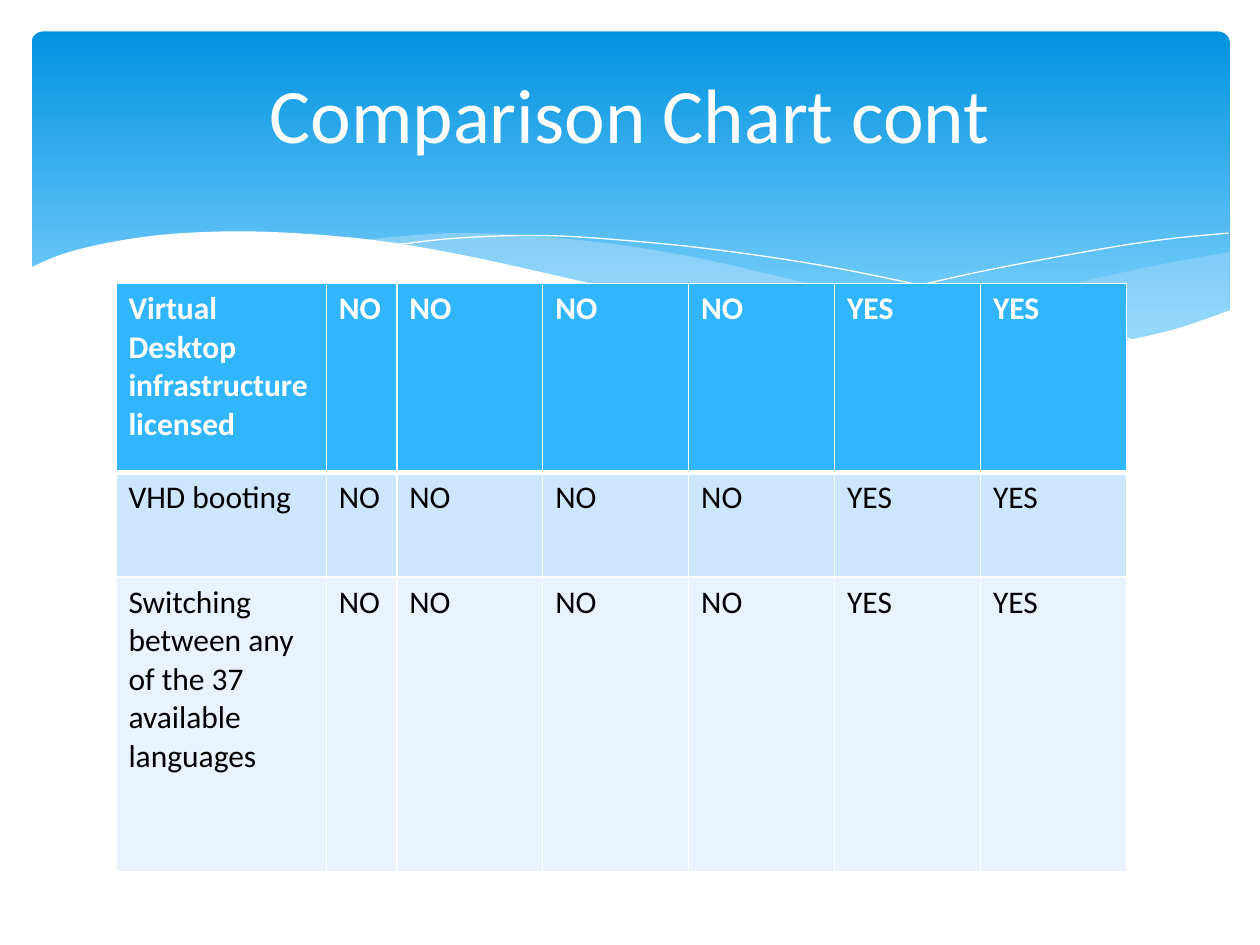
import lxml.etree
import pptx
import pptx.dml.color
import pptx.enum.shapes
import pptx.enum.text
import pptx.oxml.ns
import pptx.util

COLORS = {
    "white": "FFFFFF", "black": "000000", "sky_top": "0293E0", "sky_bottom": "83D3FE",
    "mist": "C6E7FC", "header": "31B6FD", "band_dark": "CEE5FE", "band_light": "E8F3FF",
}
GRID_COLUMNS, GRID_ROWS = 100, 75
CURVE_STEPS = 6


def color(name):
    return pptx.dml.color.RGBColor.from_string(COLORS[name])


def apply_format(target, values):
    for name, value in values.items():
        setattr(target, name, value)


def add_element(parent, tag, **attributes):
    return lxml.etree.SubElement(parent, pptx.oxml.ns.qn(tag), attributes)


def smooth(knots):
    """Return points on a Catmull-Rom curve through the knots."""
    padded = [knots[0], *knots, knots[-1]]
    points = [knots[0]]
    for a, b, c, d in zip(padded, padded[1:], padded[2:], padded[3:]):
        for step in range(1, CURVE_STEPS + 1):
            t = step / CURVE_STEPS
            points.append(tuple(
                (2 * q + (r - p) * t + (2 * p - 5 * q + 4 * r - s) * t ** 2
                 + (3 * q - p - 3 * r + s) * t ** 3) / 2
                for p, q, r, s in zip(a, b, c, d)))
    return points


class SlideBuilder:
    """Draws on one slide; lengths are grid columns and rows."""

    font = "Calibri"

    def __init__(self, presentation):
        self.column = presentation.slide_width / GRID_COLUMNS
        self.row = presentation.slide_height / GRID_ROWS
        self.slide = presentation.slides.add_slide(presentation.slide_layouts[5])
        self.shapes = self.slide.shapes

    def x(self, columns):
        return round(columns * self.column)

    def y(self, rows):
        return round(rows * self.row)

    def box(self, left, top, width, height):
        return self.x(left), self.y(top), self.x(width), self.y(height)

    def style_text(self, paragraph, size, color_name, bold=False):
        apply_format(paragraph.font, {"name": self.font, "size": pptx.util.Pt(size), "bold": bold})
        paragraph.font.color.rgb = color(color_name)

    def title(self, text, area, size):
        shape = self.shapes.title
        apply_format(shape, dict(zip(("left", "top", "width", "height"), self.box(*area))))
        frame = shape.text_frame
        apply_format(frame, {"text": text, "word_wrap": True,
                             "vertical_anchor": pptx.enum.text.MSO_ANCHOR.MIDDLE})
        paragraph = frame.paragraphs[0]
        paragraph.alignment = pptx.enum.text.PP_ALIGN.CENTER
        self.style_text(paragraph, size, "white")
        self.shapes._spTree.append(shape._element)  # bring to front

    def gradient_panel(self, area, corner, stops):
        shape = self.shapes.add_shape(
            pptx.enum.shapes.MSO_SHAPE.ROUNDED_RECTANGLE, *self.box(*area))
        shape.adjustments[0] = corner
        shape.shadow.inherit = False
        shape.line.fill.background()
        shape.fill.gradient()
        shape.fill.gradient_angle = 270
        for stop, (position, name) in zip(shape.fill.gradient_stops, stops):
            stop.position = position
            stop.color.rgb = color(name)

    def outline(self, points, closed):
        start, *rest = [(self.x(column), self.y(row)) for column, row in points]
        builder = self.shapes.build_freeform(*start)
        builder.add_line_segments(rest, close=closed)
        shape = builder.convert_to_shape()
        shape.shadow.inherit = False
        return shape

    def wave(self, *edges, fill, opacity=100):
        shape = self.outline([point for edge in edges for point in smooth(edge)], True)
        shape.line.fill.background()
        shape.fill.solid()
        shape.fill.fore_color.rgb = color(fill)
        if opacity < 100:
            node = shape._element.spPr.find(".//" + pptx.oxml.ns.qn("a:srgbClr"))
            add_element(node, "a:alpha", val=str(opacity * 1000))

    def hairline(self, knots):
        shape = self.outline(smooth(knots), False)
        shape.fill.background()
        shape.line.color.rgb = color("white")
        shape.line.width = 0

    def borders(self, cell, widths):
        properties = cell._tc.get_or_add_tcPr()
        for side, width in zip("LRTB", widths):
            line = add_element(properties, "a:ln" + side, w=str(pptx.util.Pt(width)))
            add_element(add_element(line, "a:solidFill"), "a:srgbClr", val=COLORS["white"])

    def table(self, area, widths, heights, rows, fills, size):
        table = self.shapes.add_table(len(rows), len(widths), *self.box(*area)).table
        for column, width in zip(table.columns, widths):
            column.width = self.x(width)
        for row, height in zip(table.rows, heights):
            row.height = self.y(height)
        for i, (texts, fill) in enumerate(zip(rows, fills)):
            header = i == 0
            for j, text in enumerate(texts):
                cell = table.cell(i, j)
                cell.text = text
                self.borders(cell, (1, 1, 3 if i == 1 else 1, 3 if header else 1))
                cell.fill.solid()
                cell.fill.fore_color.rgb = color(fill)
                self.style_text(cell.text_frame.paragraphs[0], size,
                                "white" if header else "black", header)


def main():
    presentation = pptx.Presentation()
    apply_format(presentation, {"slide_width": pptx.util.Inches(10),
                                "slide_height": pptx.util.Inches(7.5)})
    page = SlideBuilder(presentation)

    # Blue panel
    page.gradient_panel((2.5, 2.5, 95.1, 27), 0.034, [(0, "sky_top"), (0.9, "sky_bottom")])

    # Translucent waves, each an upper and a lower edge
    page.wave([(97.6, 20), (92.1, 21), (86.1, 22.3), (77.9, 24.2), (66.1, 26.5)],
              [(66.1, 26.5), (71.9, 27.2), (76.9, 27.7), (81.4, 27.8), (86.3, 27.5),
               (91.3, 26.7), (94.9, 25.7), (97.6, 24.7)],
              fill="mist", opacity=29)
    page.wave([(89.3, 27.3), (80.7, 26), (70.6, 24), (62.9, 22.2), (55.5, 20.5),
               (48.9, 19.4), (42, 18.7), (36.1, 18.5), (31.3, 18.8), (28.6, 19.1)],
              [(28.6, 19.1), (36.2, 20.3), (44.9, 22.2), (56.6, 24.8), (65, 26.4),
               (73.6, 27.5), (81.8, 27.8), (89.3, 27.3)],
              fill="mist", opacity=40)

    # Fine white curves
    page.hairline([(30.9, 19.5), (36.3, 18.9), (43.3, 18.7), (51, 19.2), (58.2, 20),
                   (66.5, 21.3), (76, 23.3), (83.1, 25.1), (90.7, 27.2)])
    page.hairline([(61.3, 25.7), (69.5, 23.5), (77.6, 21.6), (86.6, 19.9),
                   (92.4, 19), (97.5, 18.5)])

    # White foreground wave
    page.wave([(97.7, 24.6), (93, 26.2), (87.5, 27.3), (80.9, 27.7), (72.6, 27.2),
               (62.6, 25.8), (52.9, 23.9), (44.7, 22), (36.5, 20.2), (29.2, 19),
               (21.1, 18.4), (14.6, 18.5), (9.5, 19.1), (5.2, 20.1), (2.3, 21.3)],
              [(2.3, 32.9), (97.7, 32.9)], fill="white")

    # Comparison table
    answers = ["NO"] * 4 + ["YES"] * 2
    labels = ["Virtual Desktop infrastructure licensed", "VHD booting",
              "Switching between any of the 37 available languages"]
    page.table((9.2, 22.5, 80.2, 46.8), [16.7, 5.6] + [11.58] * 5, [15, 8.3, 23.4],
               [[label, *answers] for label in labels],
               ["header", "band_dark", "band_light"], size=18)

    # Title
    page.title("Comparison Chart cont", (5, 3.7, 90, 10.5), size=44)

    presentation.save("out.pptx")


if __name__ == "__main__":
    main()
